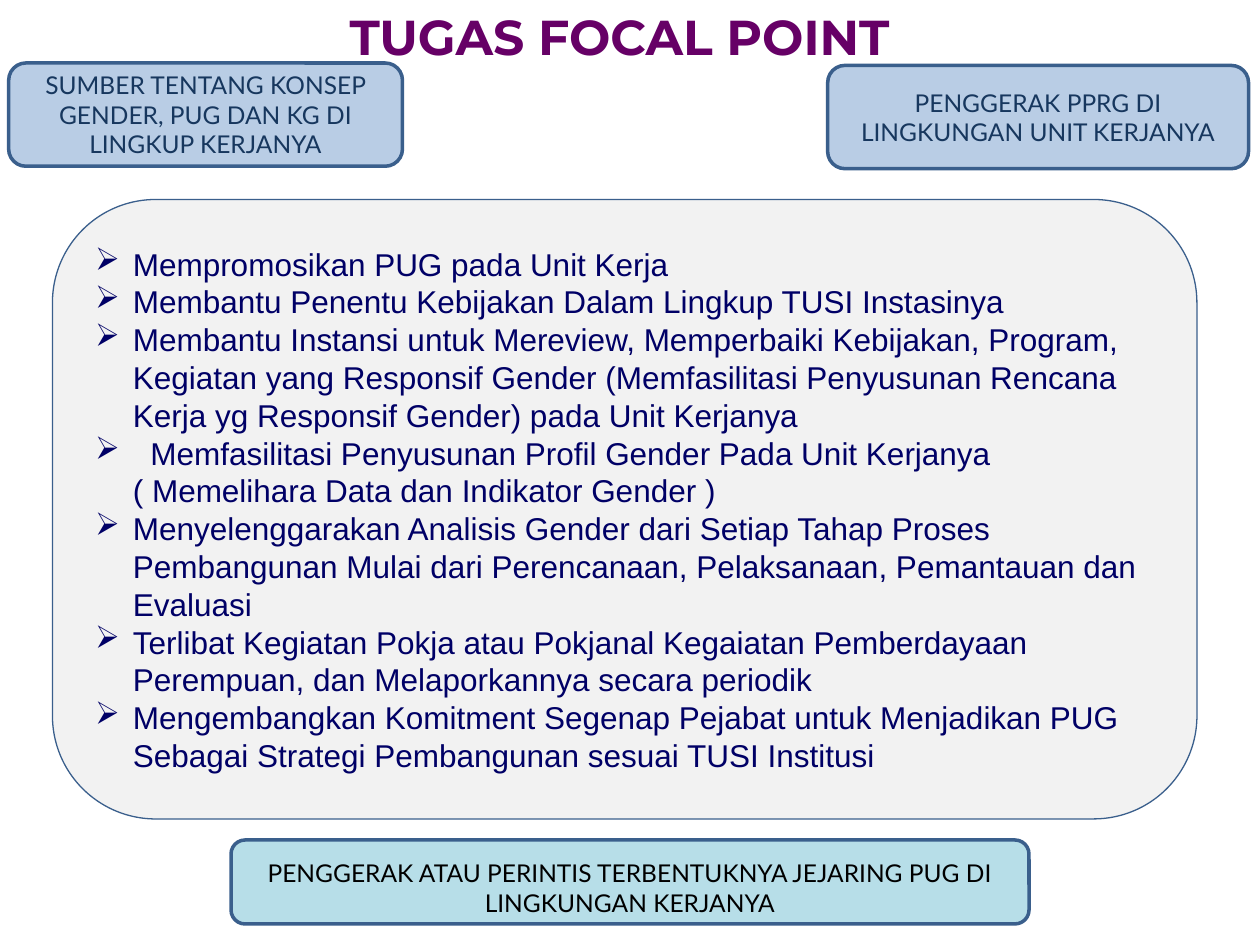
from pptx import Presentation
from pptx.dml.color import RGBColor
from pptx.enum.shapes import MSO_SHAPE as Shape
from pptx.enum.text import MSO_ANCHOR as Anchor, MSO_AUTO_SIZE as AutoSize, PP_ALIGN as Align
from pptx.oxml.ns import qn
from pptx.util import Pt
from lxml.etree import SubElement

COLORS = {
    "title": "660066", "border": "3A5F8C", "role": "B9CDE5", "role_text": "17375E",
    "network": "B7DEE8", "network_text": "000000", "panel": "F2F2F2", "task": "000066",
}
TASKS = [
    "Mempromosikan PUG pada Unit Kerja",
    "Membantu Penentu Kebijakan Dalam Lingkup TUSI Instasinya",
    "Membantu Instansi untuk Mereview, Memperbaiki Kebijakan, Program, Kegiatan yang "
    "Responsif Gender (Memfasilitasi Penyusunan Rencana Kerja yg Responsif Gender) "
    "pada Unit Kerjanya",
    "  Memfasilitasi Penyusunan Profil Gender Pada Unit Kerjanya "
    "( Memelihara Data dan Indikator Gender )",
    "Menyelenggarakan Analisis Gender dari Setiap Tahap Proses Pembangunan Mulai dari "
    "Perencanaan, Pelaksanaan, Pemantauan dan Evaluasi",
    "Terlibat Kegiatan Pokja atau Pokjanal Kegaiatan Pemberdayaan Perempuan, dan "
    "Melaporkannya secara periodik",
    "Mengembangkan Komitment Segenap Pejabat untuk Menjadikan PUG Sebagai Strategi "
    "Pembangunan sesuai TUSI Institusi",
]


class FocalPointSlide:
    title_font, label_font, task_font = "Montserrat", "Lato", "Arial"

    def __init__(self, slide):
        self.slide = slide

    def color(self, name):
        return RGBColor.from_string(COLORS[name])

    def add_text(self, paragraph, text, font, size, color, align, bold=False):
        paragraph.alignment = align
        run = paragraph.add_run()
        run.text = text
        run.font.name, run.font.size, run.font.bold = font, Pt(size), bold
        run.font.color.rgb = self.color(color)

    def title(self, box, text):
        heading = self.slide.shapes.add_textbox(*map(Pt, box)).text_frame
        heading.word_wrap = False
        heading.auto_size = AutoSize.SHAPE_TO_FIT_TEXT
        self.add_text(heading.paragraphs[0], text, self.title_font, 28, "title",
                      Align.CENTER, bold=True)

    def panel(self, box, fill, border):
        panel = self.slide.shapes.add_shape(Shape.ROUNDED_RECTANGLE, *map(Pt, box))
        panel.shadow.inherit = False
        panel.fill.solid()
        panel.fill.fore_color.rgb = self.color(fill)
        panel.line.color.rgb = self.color("border")
        panel.line.width = Pt(border)
        frame = panel.text_frame
        frame.word_wrap = True
        frame.vertical_anchor = Anchor.MIDDLE
        return frame

    def label(self, box, text, fill, color, top_inset=3.6):
        frame = self.panel(box, fill, 2)
        frame.margin_top = Pt(top_inset)
        self.add_text(frame.paragraphs[0], text, self.label_font, 14, color, Align.CENTER)

    def task_list(self, box, tasks, indent=21.6):
        frame = self.panel(box, "panel", 0.75)
        for number, task in enumerate(tasks):
            paragraph = frame.add_paragraph() if number else frame.paragraphs[0]
            self.add_text(paragraph, task, self.task_font, 18, "task", Align.LEFT)
            # Arrow bullet with hanging indent
            props = paragraph._p.get_or_add_pPr()
            props.set("marL", str(Pt(indent)))
            props.set("indent", str(-Pt(indent)))
            SubElement(props, qn("a:buChar"), char="➢")


def main():
    deck = Presentation()
    deck.slide_width, deck.slide_height = Pt(720), Pt(540)
    page = FocalPointSlide(deck.slides.add_slide(deck.slide_layouts[6]))

    # Title
    page.title((180, 0, 348, 41), "TUGAS FOCAL POINT")

    # Roles at the top
    page.label((5, 36, 225, 59), "SUMBER TENTANG KONSEP GENDER, PUG DAN KG DI LINGKUP KERJANYA",
               "role", "role_text")
    page.label((473, 37.4, 240.5, 59), "PENGGERAK PPRG DI LINGKUNGAN UNIT KERJANYA",
               "role", "role_text")

    # Role at the bottom
    page.label((132, 480, 456, 48),
               "PENGGERAK ATAU PERINTIS TERBENTUKNYA JEJARING PUG DI LINGKUNGAN KERJANYA",
               "network", "network_text", top_inset=10)

    # Tasks
    page.task_list((30, 114, 654, 354), TASKS)

    deck.save("out.pptx")


if __name__ == "__main__":
    main()
